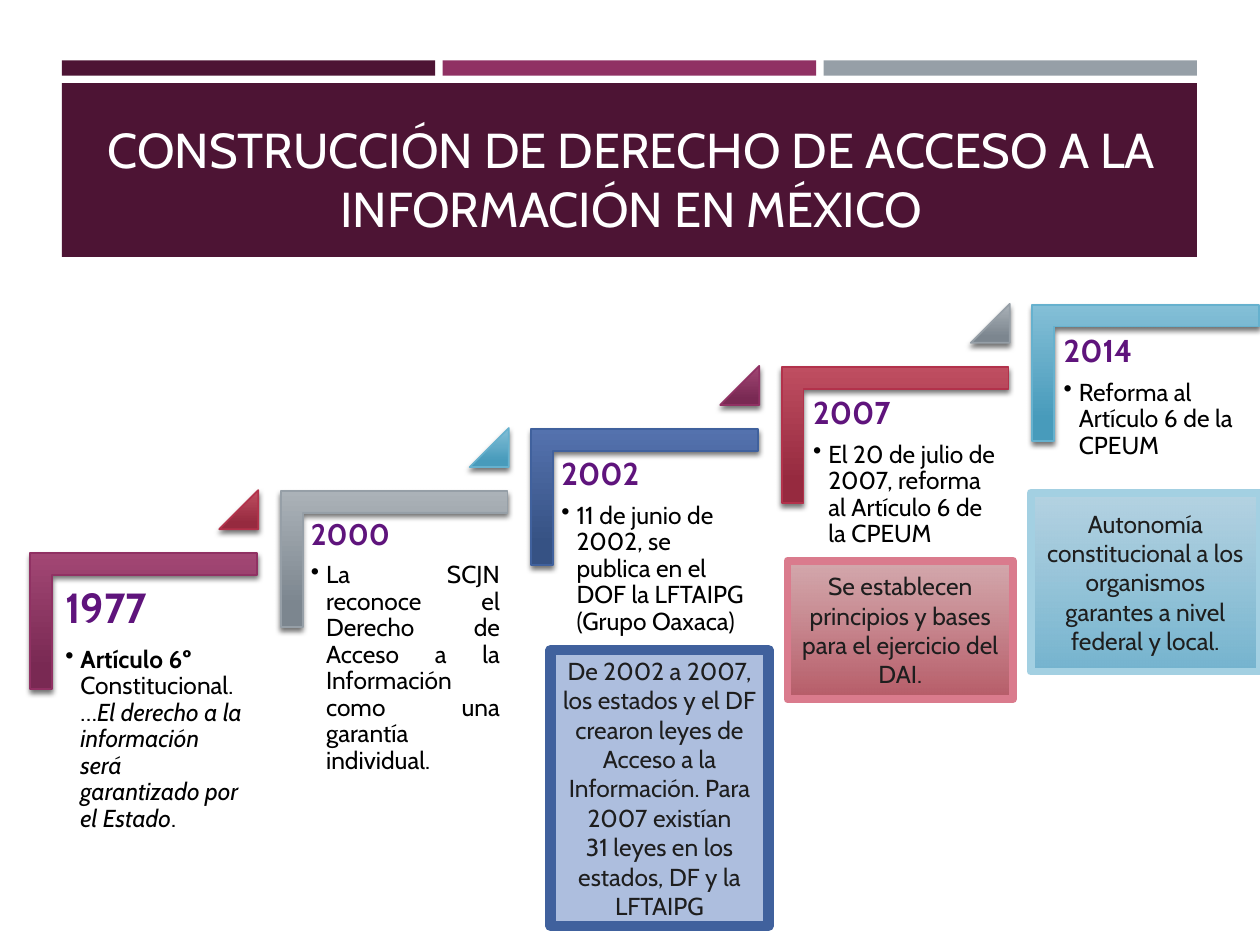
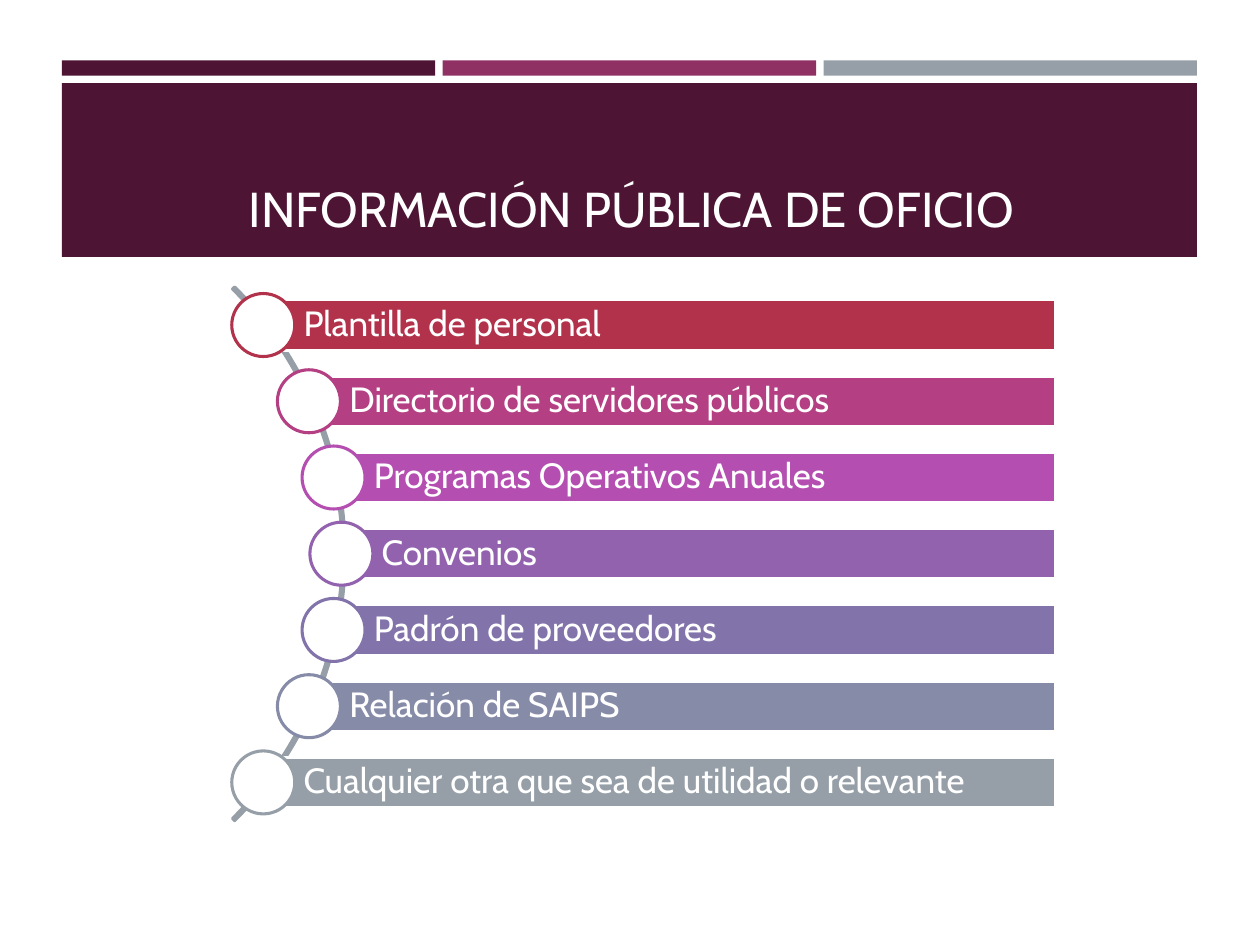
import math

import pptx
import pptx.util
import pptx.oxml
import pptx.oxml.ns
import pptx.dml.color
import pptx.enum.shapes
import pptx.enum.text
from lxml import etree

RGB = pptx.dml.color.RGBColor
SHAPE = pptx.enum.shapes.MSO_SHAPE
ALIGN = pptx.enum.text.PP_ALIGN
ANCHOR = pptx.enum.text.MSO_ANCHOR
Pt = pptx.util.Pt
qn = pptx.oxml.ns.qn

FONT = "Cabin"
WINE = RGB(0x4D, 0x14, 0x34)
PLUM = RGB(0x90, 0x31, 0x63)
GRAY = RGB(0x96, 0x9F, 0xA7)
RED = RGB(0xB2, 0x32, 0x4B)
SKY = RGB(0x66, 0xB1, 0xCE)
BLUE = RGB(0x40, 0x61, 0x9D)
YEAR = RGB(0x5F, 0x14, 0x7C)
INK = RGB(0x1E, 0x1E, 0x1E)
WHITE = RGB(0xFF, 0xFF, 0xFF)
BLACK = RGB(0, 0, 0)
ROSE = RGB(0xDA, 0x7B, 0x8D)
ICE = RGB(0xA3, 0xD0, 0xE2)
PALE = RGB(0xAD, 0xBE, 0xDE)

# Light and dark end of the shading for each step colour
SHADES = {
    PLUM: (RGB(0xA2, 0x47, 0x74), RGB(0x79, 0x29, 0x53)),
    GRAY: (RGB(0xAB, 0xB2, 0xB8), RGB(0x7C, 0x86, 0x8F)),
    BLUE: (RGB(0x54, 0x72, 0xAE), RGB(0x36, 0x52, 0x84)),
    RED: (RGB(0xBF, 0x4E, 0x61), RGB(0x96, 0x2A, 0x3F)),
    SKY: (RGB(0x84, 0xBF, 0xD7), RGB(0x48, 0x9B, 0xBB)),
}

# The slide is a grid of 100 columns by 75 rows
COLS, ROWS = 100, 75
WIDTH, HEIGHT = pptx.util.Inches(10), pptx.util.Inches(7.5)


def place(box):
    x, y, w, h = box
    col, row = WIDTH / COLS, HEIGHT / ROWS
    return [round(v) for v in (x * col, y * row, w * col, h * row)]


def draw(slide, kind, box, fill=None, line=None, width=1):
    shape = slide.shapes.add_shape(kind, *place(box))
    shape.shadow.inherit = False
    if fill is None:
        shape.fill.background()
    else:
        shape.fill.solid()
        shape.fill.fore_color.rgb = fill
    if line is None:
        shape.line.fill.background()
    else:
        shape.line.color.rgb = line
        shape.line.width = Pt(width)
    return shape


def shade(shape, ends, last, alpha=None):
    """Vertical gradient that stays upright when the shape is turned."""
    shape.fill.gradient()
    shape.fill.gradient_angle = 270
    stops = shape.fill.gradient_stops
    for stop, color, pos in zip(stops, ends, (0, last)):
        stop.color.rgb = color
        stop.position = pos
    grad = shape._element.spPr.find(qn("a:gradFill"))
    grad.set("rotWithShape", "0")
    if alpha:
        first = next(grad.iter(qn("a:srgbClr")))
        etree.SubElement(first, qn("a:alpha"), val=str(alpha * 1000))


def cast(shape):
    """Soft shadow straight below the shape."""
    effects = shape._element.spPr.find(qn("a:effectLst"))
    outer = etree.SubElement(effects, qn("a:outerShdw"), blurRad=str(Pt(3)),
                             dist=str(Pt(2)), dir="5400000", rotWithShape="0")
    color = etree.SubElement(outer, qn("a:srgbClr"), val=str(BLACK))
    etree.SubElement(color, qn("a:alpha"), val="55000")


def style(para, size, color, align=ALIGN.LEFT, bold=False):
    para.alignment = align
    for run in para.runs:
        run.font.name = FONT
        run.font.size = Pt(size)
        run.font.color.rgb = color
        run.font.bold = bold


def frame(shape, anchor, inset=None):
    text = shape.text_frame
    text.word_wrap = True
    text.vertical_anchor = anchor
    if inset is not None:
        text.margin_left = text.margin_right = place((inset, 0, 0, 0))[0]
        text.margin_top = text.margin_bottom = text.margin_left
    return text


def header(slide, title, box=(4.9, 4.8, 90.1, 15.6)):
    x, y, w, h = box
    # Three strips over the title band
    gap = 0.6
    strip = (w - 2 * gap) / 3
    for i, color in enumerate((WINE, PLUM, GRAY)):
        draw(slide, SHAPE.RECTANGLE,
             (x + i * (strip + gap), y, strip, 1.2), color)
    draw(slide, SHAPE.RECTANGLE, (x, y + 1.8, w, h - 1.8), WINE)
    # Title
    area = slide.shapes.add_textbox(*place((x + 1.5, y + 2.7, w - 2.7, 11.8)))
    text = frame(area, ANCHOR.BOTTOM)
    text.text = title
    style(text.paragraphs[0], 28, WHITE, ALIGN.CENTER)


def step(slide, box, color, tip, year, size, inset, parts, align):
    x, y, w, h = box
    # Corner bracket, turned a quarter about its centre
    edge = draw(slide, SHAPE.CORNER,
                (x + (w - h) / 2, y + (h - w) / 2, h, w), color, color)
    edge.rotation = 90
    edge.adjustments[0] = edge.adjustments[1] = 0.161
    shade(edge, SHADES[color], 0.84)
    cast(edge)
    # Year and bullet
    area = slide.shapes.add_textbox(*place((x + 1.8, y + 1.7, 16.2, 14.2)))
    text = frame(area, ANCHOR.TOP, inset)
    text.text = year
    head, item = text.paragraphs[0], text.add_paragraph()
    style(head, size, YEAR, align, True)
    head.space_after = Pt(0.35 * size)
    for words, _ in parts:
        item.add_run().text = words
    style(item, 14, BLACK, align)
    for run, (_, look) in zip(item.runs, parts):
        run.font.bold = look == "bold"
        run.font.italic = look == "italic"
    item.level = 1
    item.space_after = Pt(2)
    head.line_spacing = item.line_spacing = 0.9
    props = item._p.get_or_add_pPr()
    hang = place((1.2, 0, 0, 0))[0]
    props.set("marL", str(hang))
    props.set("indent", str(-hang))
    etree.SubElement(props, qn("a:buChar"), char="•")
    # Triangle that points to the next step
    if tip:
        mark = draw(slide, SHAPE.ISOSCELES_TRIANGLE,
                    (x + 15, y - 5, 3.1, 3.1), tip, tip)
        mark.adjustments[0] = 1
        shade(mark, SHADES[tip], 0.84)
        cast(mark)


def note(slide, box, fill, line, width, lines):
    card = draw(slide, SHAPE.RECTANGLE, box, line, line, width)
    if isinstance(fill, RGB):
        card.fill.fore_color.rgb = fill
    else:
        shade(card, fill, 1, 90)
    text = frame(card, ANCHOR.MIDDLE)
    text.text = "\n".join(lines)
    for para in text.paragraphs:
        style(para, 14, INK, ALIGN.CENTER)


def stairs(slide, box=(2.4, 43.9, 18, 10.8)):
    x, y, w, h = box
    left = ALIGN.LEFT
    steps = [
        (PLUM, RED, "1977", 24, 1,
         [("Artículo 6º ", "bold"), ("Constitucional. …", ""),
          ("El derecho a la información será garantizado por el Estado",
           "italic"), (".", "")], left),
        (GRAY, SKY, "2000", 17, 0.6,
         [("La SCJN reconoce el Derecho de Acceso a la Información como una "
           "garantía individual.", "")], ALIGN.JUSTIFY),
        (BLUE, PLUM, "2002", 18, 0.6,
         [("11 de junio de 2002, se publica en el DOF la LFTAIPG "
           "(Grupo Oaxaca)", "")], left),
        (RED, GRAY, "2007", 18, 0.7,
         [("El 20 de julio de 2007, reforma al Artículo 6 de la CPEUM", "")],
         left),
        (SKY, None, "2014", 18, 0.7,
         [("Reforma al Artículo 6 de la CPEUM", "")], left),
    ]
    for i, parts in enumerate(steps):
        step(slide, (x + 19.88 * i, y - 4.93 * i, w, h), *parts)


def notes(slide):
    note(slide, (43.7, 51.6, 17.3, 21.9), PALE, BLUE, 6,
         ["De 2002 a 2007, los estados y el DF crearon leyes de Acceso a la "
          "Información. Para 2007 existían",
          "31 leyes en los estados, DF y la LFTAIPG"])
    note(slide, (62.5, 44.5, 17.9, 11),
         (RGB(0xCF, 0x9F, 0xA4), RGB(0xB7, 0x5C, 0x68)), ROSE, 4.5,
         ["Se establecen principios y bases para el ejercicio del DAI."])
    note(slide, (81.8, 39.1, 18.2, 14.2),
         (RGB(0xAC, 0xCE, 0xDF), RGB(0x75, 0xB4, 0xCF)), ICE, 4.5,
         ["Autonomía constitucional a los organismos garantes a nivel "
          "federal y local."])


def arc(slide, box=(-32.5, 14, 59.9, 59.9)):
    x, y, w, h = box
    # Curve behind the list, 45 degrees to each side
    curve = draw(slide, SHAPE.BLOCK_ARC, box, None, GRAY, 1.75)
    for i, value in enumerate((189, 27, 0.004)):
        curve.adjustments[i] = value
    # Bars start on the curve and share their right edge
    items = [
        ("Plantilla de personal", RED),
        ("Directorio de servidores públicos", RGB(0xB4, 0x3F, 0x83)),
        ("Programas Operativos Anuales", RGB(0xB4, 0x4E, 0xB1)),
        ("Convenios", RGB(0x93, 0x62, 0xAF)),
        ("Padrón de proveedores", RGB(0x82, 0x74, 0xAB)),
        ("Relación de SAIPS", RGB(0x86, 0x8B, 0xA8)),
        ("Cualquier otra que sea de utilidad o relevante", GRAY),
    ]
    midx, midy, reach = x + w / 2, y + h / 2, w / 2 - 0.3
    right, tall, dot, pitch = 83.8, 4, 5, 6.05
    for i, (words, color) in enumerate(items):
        drop = (i - len(items) // 2) * pitch
        left = midx + math.sqrt(reach ** 2 - drop ** 2)
        top = midy + drop
        bar = draw(slide, SHAPE.RECTANGLE,
                   (left, top - tall / 2, right - left, tall),
                   color, WHITE, 1.75)
        text = frame(bar, ANCHOR.MIDDLE, 0.6)
        text.margin_left = place((3.2, 0, 0, 0))[0]
        text.text = words
        text.paragraphs[0].line_spacing = 0.9
        style(text.paragraphs[0], 20, WHITE)
        draw(slide, SHAPE.OVAL, (left - dot / 2, top - dot / 2, dot, dot),
             WHITE, color, 1.75)


def main():
    deck = pptx.Presentation()
    deck.slide_width, deck.slide_height = WIDTH, HEIGHT
    blank = deck.slide_layouts[6]

    # Timeline
    slide = deck.slides.add_slide(blank)
    header(slide, "CONSTRUCCIÓN DE DERECHO DE ACCESO A LA "
                  "INFORMACIÓN EN MÉXICO")
    stairs(slide)
    notes(slide)

    # Curved list
    slide = deck.slides.add_slide(blank)
    header(slide, "INFORMACIÓN PÚBLICA DE OFICIO")
    arc(slide)

    deck.save("out.pptx")


if __name__ == "__main__":
    main()
